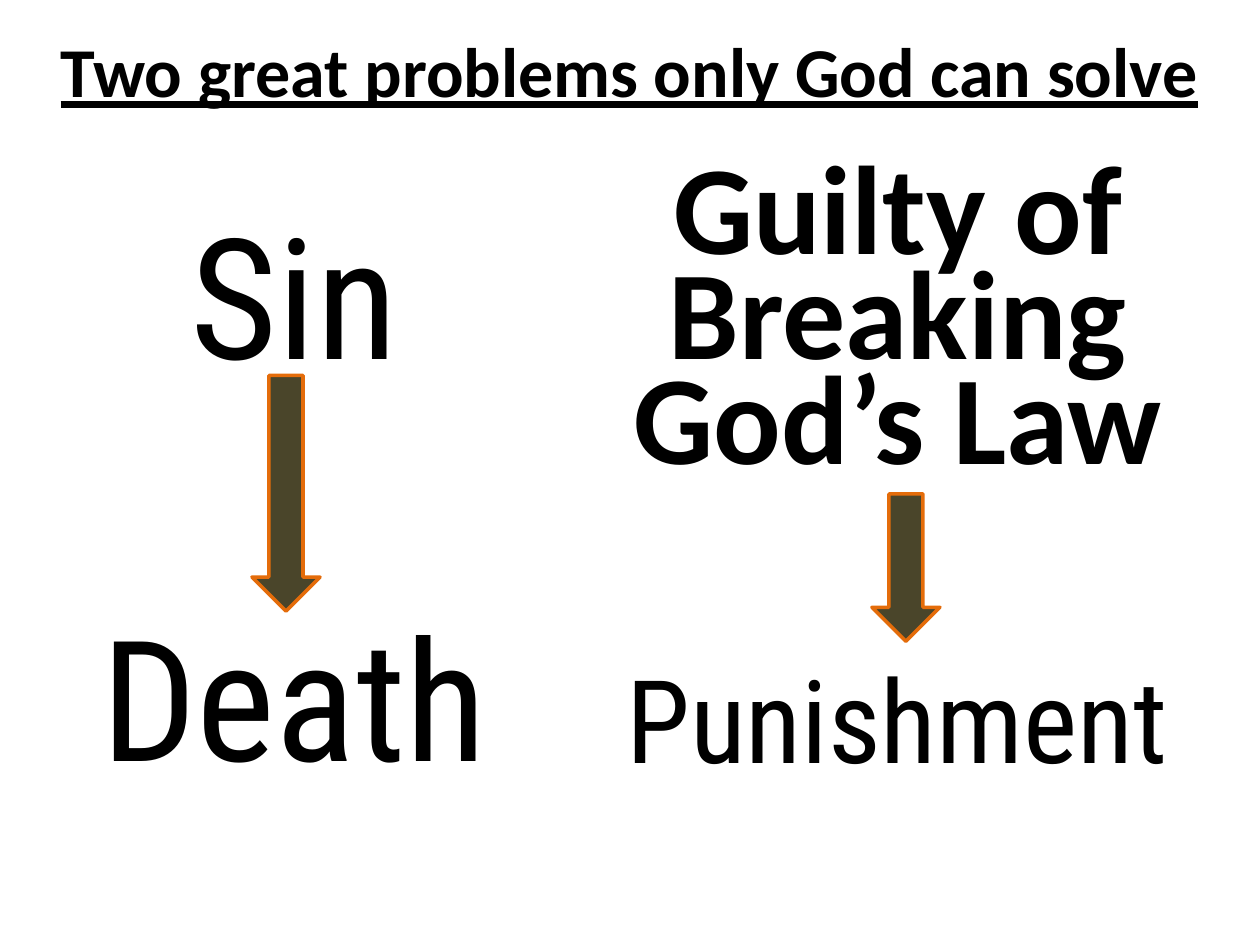
from dataclasses import dataclass

from pptx import Presentation
from pptx.dml.color import RGBColor
from pptx.enum.shapes import MSO_SHAPE
from pptx.enum.text import MSO_ANCHOR, PP_ALIGN
from pptx.util import Inches, Pt

DOWN_ARROW = MSO_SHAPE.DOWN_ARROW
TOP, MIDDLE = MSO_ANCHOR.TOP, MSO_ANCHOR.MIDDLE
CENTER = PP_ALIGN.CENTER


@dataclass(frozen=True)
class Theme:
    text: RGBColor = RGBColor(0x00, 0x00, 0x00)
    arrow_fill: RGBColor = RGBColor(0x4A, 0x45, 0x2A)
    arrow_line: RGBColor = RGBColor(0xE4, 0x6C, 0x0A)
    bold_font: str = "Calibri"
    plain_font: str = "Roboto Condensed"
    heading: Pt = Pt(40)
    punishment: Pt = Pt(66)
    guilt: Pt = Pt(72)
    sin: Pt = Pt(96)


theme = Theme()
prs = Presentation()
prs.slide_width, prs.slide_height = Inches(10), Inches(7.5)
slide = prs.slides.add_slide(prs.slide_layouts[6])


def add_text(text, box, size, font, anchor=TOP, bold=False, underline=False):
    sp = slide.shapes.add_textbox(*map(Inches, box))
    tf = sp.text_frame
    tf.word_wrap = True
    tf.vertical_anchor = anchor
    tf.text = text
    for p in tf.paragraphs:
        p.alignment = CENTER
        for r in p.runs:
            r.font.name = font
            r.font.size = size
            r.font.bold = bold
            r.font.underline = underline
            r.font.color.rgb = theme.text
    return tf


# Left column: one line of space separates cause and result
tf = add_text("Sin\nDeath", (0.5, 1.25, 3.67, 5.33), theme.sin, theme.plain_font, MIDDLE)
tf.paragraphs[1].space_before = Pt(115)

# Right column
tf = add_text("Guilty of\vBreaking\vGod’s Law", (4.75, 0.75, 4.75, 3.77),
              theme.guilt, theme.bold_font, MIDDLE, bold=True)
tf.paragraphs[0].line_spacing = Pt(60)
add_text("Punishment", (4.33, 5.09, 5.58, 1.21), theme.punishment, theme.plain_font)

# Heading
add_text("Two great problems only God can solve", (0.08, 0.17, 9.83, 0.77),
         theme.heading, theme.bold_font, bold=True, underline=True)

# Arrows from cause to result
for left, top, height in ((2, 2.98, 1.87), (6.92, 3.92, 1.17)):
    sp = slide.shapes.add_shape(DOWN_ARROW, Inches(left), Inches(top),
                                Inches(0.54), Inches(height))
    sp.shadow.inherit = False
    sp.fill.solid()
    sp.fill.fore_color.rgb = theme.arrow_fill
    sp.line.color.rgb = theme.arrow_line
    sp.line.width = Pt(2)

prs.save("out.pptx")
